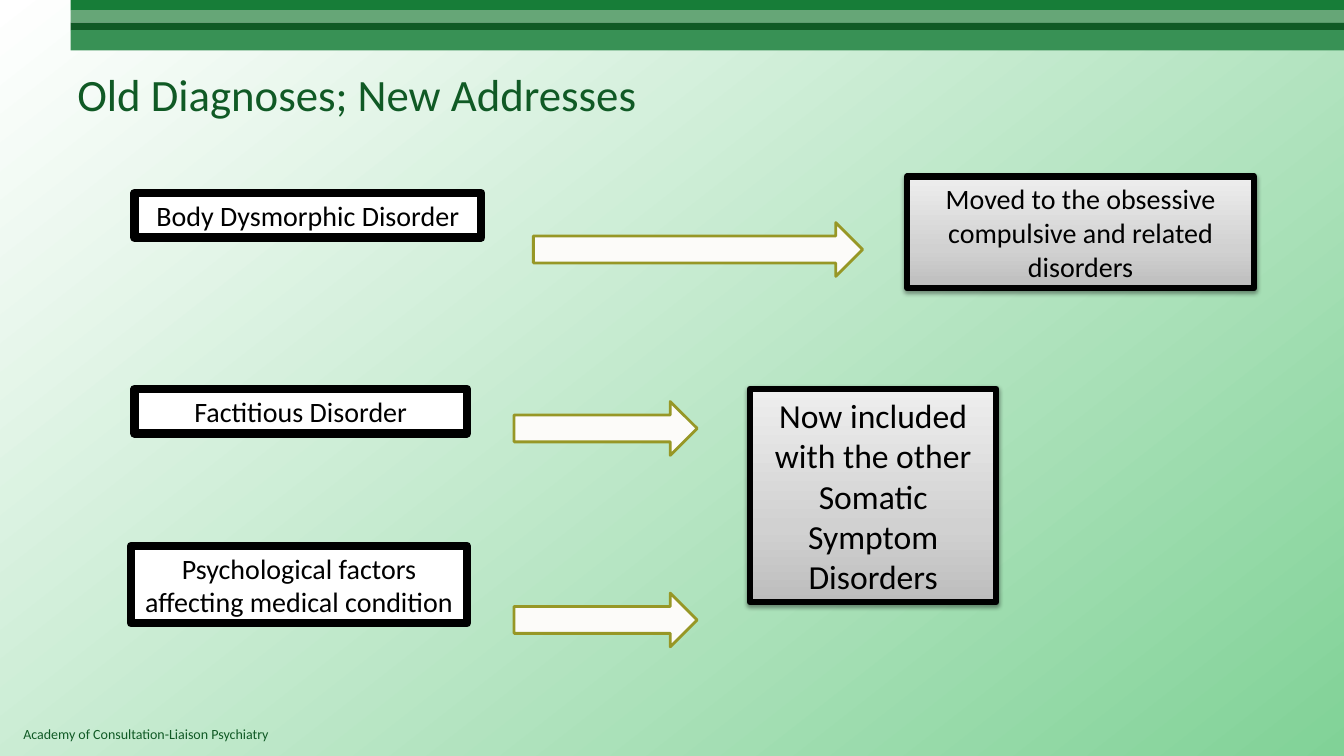
from itertools import pairwise

from lxml import etree
from pptx import Presentation
from pptx.dml.color import RGBColor
from pptx.enum.shapes import MSO_SHAPE
from pptx.enum.text import MSO_ANCHOR, PP_ALIGN
from pptx.oxml import parse_xml
from pptx.oxml.ns import nsdecls, qn
from pptx.util import Inches, Pt

RECT, ARROW = MSO_SHAPE.RECTANGLE, MSO_SHAPE.RIGHT_ARROW
MIDDLE = MSO_ANCHOR.MIDDLE
LEFT, CENTER = PP_ALIGN.LEFT, PP_ALIGN.CENTER
WIDE, HIGH = Inches(13.333), Inches(7.5)
COLS, ROWS = 16, 9
GREEN, BLACK = "105A25", "000000"
GRAYS = [(0, "BDBDBD"), (35, "D1D1D1"), (100, "EEEEEE")]
BACK = [(0, "FFFFFF"), (100, "81D297")]
BANDS = ["177D38", "66A677", GREEN, "389155"]
EDGES = [0, 0.12, 0.27, 0.36, 0.6]

OLD = [
    ("Body Dysmorphic Disorder", (1.6, 2.3, 4.13, 0.53)),
    ("Factitious Disorder", (1.6, 4.63, 3.96, 0.53)),
    ("Psychological factors affecting medical condition", (1.56, 6.5, 4, 0.92)),
]
ARROWS = [(6.35, 2.65, 3.92, 0.64), (6.12, 4.78, 2.18, 0.64), (6.12, 7.06, 2.18, 0.64)]
NEW = [
    ("Now included with the other Somatic Symptom Disorders", 24, (8.93, 4.63, 2.93, 2.54)),
    ("Moved to the obsessive compulsive and related disorders", 20, (10.8, 2.1, 4.13, 1.33)),
]


def color(code):
    """Turn a hex string into a colour."""
    return RGBColor.from_string(code)


def place(col, row, wide, high):
    """Turn grid cells into slide lengths."""
    return [int(n * size) for n, size in
            ((col, WIDE / COLS), (row, HIGH / ROWS), (wide, WIDE / COLS), (high, HIGH / ROWS))]


def assign(item, values):
    """Set every attribute named in a dict."""
    for name, value in values.items():
        setattr(item, name, value)


def shade(fill, root, stops, angle):
    """Give a fill a linear gradient with any number of stops."""
    fill.gradient()
    fill.gradient_angle = angle
    stop_list = root.xpath(".//a:gsLst")[0]
    for stop in list(stop_list):
        stop_list.remove(stop)
    for share, code in stops:
        stop = etree.SubElement(stop_list, qn("a:gs"), pos=str(share * 1000))
        etree.SubElement(stop, qn("a:srgbClr"), val=code)


def write(item, text, size, code, align):
    """Put one styled paragraph into a shape."""
    frame = item.text_frame
    assign(frame, {"word_wrap": True, "text": text})
    para = frame.paragraphs[0]
    para.alignment = align
    assign(para.font, {"name": "Calibri", "size": Pt(size), "bold": False})
    para.font.color.rgb = color(code)


def add_form(slide, kind, cells, fill=None, line=None, width=0):
    """Add a flat shape with an optional fill and line."""
    form = slide.shapes.add_shape(kind, *place(*cells))
    form.shadow.inherit = False
    if fill:
        form.fill.solid()
        form.fill.fore_color.rgb = color(fill)
    if line:
        form.line.color.rgb = color(line)
        form.line.width = Pt(width)
    else:
        form.line.fill.background()
    return form


def add_shadow(form):
    """Drop a soft shadow below a shape."""
    effects = form._element.spPr.find(qn("a:effectLst"))
    effects.append(parse_xml(
        f'<a:outerShdw {nsdecls("a")} blurRad="{Pt(3.1)}" dist="{Pt(1.6)}" dir="5400000" '
        'rotWithShape="0"><a:srgbClr val="000000"><a:alpha val="38000"/>'
        '</a:srgbClr></a:outerShdw>'))


def add_new(slide, text, size, cells):
    """Add a grey box naming the new home of a diagnosis."""
    box = add_form(slide, RECT, cells, None, BLACK, 4.5)
    shade(box.fill, box._element, GRAYS, 90)
    add_shadow(box)
    write(box, text, size, BLACK, CENTER)


def add_title(slide, text):
    """Fill and move the title placeholder."""
    title = slide.shapes.title
    assign(title, dict(zip(("left", "top", "width", "height"), place(0.8, 0.36, 14.4, 1.5))))
    write(title, text, 32, GREEN, LEFT)
    title.text_frame.vertical_anchor = MIDDLE


def main():
    """Build and save the slide."""
    deck = Presentation()
    assign(deck, {"slide_width": WIDE, "slide_height": HIGH})
    slide = deck.slides.add_slide(deck.slide_layouts[5])
    shade(slide.background.fill, slide._element, BACK, 308)
    for code, (top, end) in zip(BANDS, pairwise(EDGES)):
        add_form(slide, RECT, (0.84, top, COLS - 0.84, end - top), code)
    foot = slide.shapes.add_textbox(*place(0.16, 8.58, 11.1, 0.32))
    write(foot, "Academy of Consultation-Liaison Psychiatry", 10, GREEN, LEFT)
    add_title(slide, "Old Diagnoses; New Addresses")
    for text, cells in OLD:
        write(add_form(slide, RECT, cells, "FFFFFF", BLACK, 6), text, 20, BLACK, CENTER)
    for cells in ARROWS:
        add_form(slide, ARROW, cells, "FCFBF9", "979726", 2)
    for text, size, cells in NEW:
        add_new(slide, text, size, cells)
    deck.save("out.pptx")


if __name__ == "__main__":
    main()
